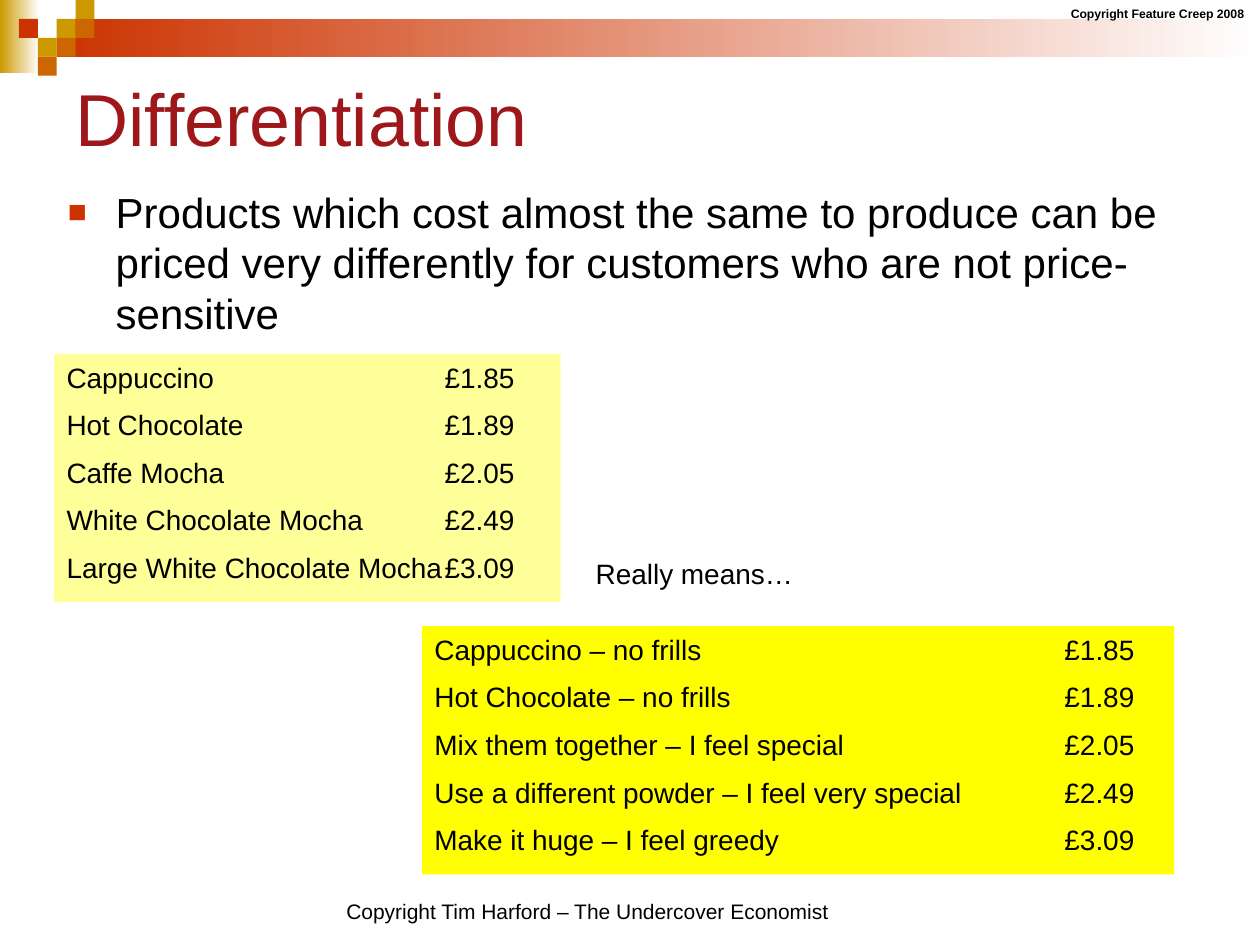
"""Builds the price differentiation slide."""
from lxml import etree
from pptx import Presentation, util as u
from pptx.dml.color import RGBColor
from pptx.enum import shapes, text
from pptx.oxml.ns import qn

HUES = {"ink": "000000", "title": "9E171B", "red": "CC3300", "gold": "CC9900",
        "rust": "CC6600", "white": "FFFFFF", "pale": "FFFF99", "sun": "FFFF00"}
PRICES = ["£1.85", "£1.89", "£2.05", "£2.49", "£3.09"]
MENU = ["Cappuccino", "Hot Chocolate", "Caffe Mocha", "White Chocolate Mocha",
        "Large White Chocolate Mocha"]
MEANING = ["Cappuccino – no frills", "Hot Chocolate – no frills",
           "Mix them together – I feel special",
           "Use a different powder – I feel very special",
           "Make it huge – I feel greedy"]
TILE = 1.5
TILES = [(3, 1, "gold"), (4, 0, "gold"), (4, 1, "rust"), (2, 2, "gold"),
         (1, 1, "red"), (3, 2, "rust"), (2, 3, "rust")]


class Deck:
    """Holds the style and current slide; places are cells of a 100 by 75 grid."""

    def __init__(self, font="Arial", cols=100, rows=75):
        self.prs = Presentation()
        self.prs.slide_width, self.prs.slide_height = u.Inches(10), u.Inches(7.5)
        self.col = self.prs.slide_width / cols
        self.row = self.prs.slide_height / rows
        self.font = font
        self.slide = self.prs.slides.add_slide(self.prs.slide_layouts[5])

    def place(self, x, y, w, h):
        return [int(x * self.col), int(y * self.row), int(w * self.col), int(h * self.row)]

    def hue(self, name):
        return RGBColor.from_string(HUES[name])

    def style(self, para, size, hue="ink", bold=False):
        para.alignment = text.PP_ALIGN.LEFT
        for run in para.runs:
            run.font.name, run.font.size, run.font.bold = self.font, u.Pt(size), bold
            run.font.color.rgb = self.hue(hue)

    def title(self, words, at, size):
        shape = self.slide.shapes.title
        shape.left, shape.top, shape.width, shape.height = self.place(*at)
        shape.text_frame.text = words
        shape.text_frame.vertical_anchor = text.MSO_ANCHOR.MIDDLE
        self.style(shape.text_frame.paragraphs[0], size, "title")

    def block(self, at, hue, fade=None):
        shape = self.slide.shapes.add_shape(shapes.MSO_SHAPE.RECTANGLE, *self.place(*at))
        shape.shadow.inherit = False
        shape.line.fill.background()
        if fade:
            shape.fill.gradient()
            shape.fill.gradient_angle = 0
            for stop, name in zip(shape.fill.gradient_stops, (hue, fade)):
                stop.color.rgb = self.hue(name)
        else:
            shape.fill.solid()
            shape.fill.fore_color.rgb = self.hue(hue)
        return shape

    def label(self, words, at, size, bold=False, wrap=False):
        box = self.slide.shapes.add_textbox(*self.place(*at))
        box.text_frame.word_wrap = wrap
        box.text_frame.text = words
        para = box.text_frame.paragraphs[0]
        self.style(para, size, bold=bold)
        return para

    def bullet(self, words, at, size):
        para = self.label(words, at, size, wrap=True)
        props = para._p.get_or_add_pPr()
        dent = int(3.8 * self.col)
        props.set("marL", str(dent))
        props.set("indent", str(-dent))
        tint = etree.SubElement(props, qn("a:buClr"))
        etree.SubElement(tint, qn("a:srgbClr"), val=HUES["red"])
        etree.SubElement(props, qn("a:buSzPct"), val="75000")
        etree.SubElement(props, qn("a:buFont"), typeface=self.font)
        etree.SubElement(props, qn("a:buChar"), char="■")

    def prices(self, names, at, hue, stop, size=16):
        frame = self.block(at, hue).text_frame
        frame.word_wrap = True
        frame.vertical_anchor = text.MSO_ANCHOR.TOP
        frame.text = "\n".join(f"{name}\t{price}" for name, price in zip(names, PRICES))
        for i, para in enumerate(frame.paragraphs):
            if i:
                para.space_before = u.Pt(8)
            tabs = etree.SubElement(para._p.get_or_add_pPr(), qn("a:tabLst"))
            etree.SubElement(tabs, qn("a:tab"), pos=str(int(stop * self.col)), algn="l")
            self.style(para, size)


def main():
    deck = Deck()
    deck.block((0, 0, 3.1, 5.8), "gold", "white")
    deck.block((4.5, TILE, 95.5, 3), "red", "white")
    for x, y, hue in TILES:
        deck.block((x * TILE, y * TILE, TILE, TILE), hue)
    deck.label("Copyright Feature Creep 2008", (84, 0, 16, 2.2), 7, bold=True)
    deck.title("Differentiation", (5, 5, 90, 8.6), 42)
    deck.bullet("Products which cost almost the same to produce can be priced very "
                "differently for customers who are not price-sensitive",
                (4.4, 14.3, 90, 19.5), 24)
    deck.prices(MENU, (4.3, 28.1, 40.2, 19.7), "pale", 30)
    deck.prices(MEANING, (33.5, 49.7, 59.7, 19.7), "sun", 50)
    deck.label("Copyright Tim Harford – The Undercover Economist", (26.5, 70.8, 40.4, 3), 12)
    deck.label("Really means…", (46.3, 43.7, 17.7, 3.7), 16)
    deck.prs.save("out.pptx")


if __name__ == "__main__":
    main()
